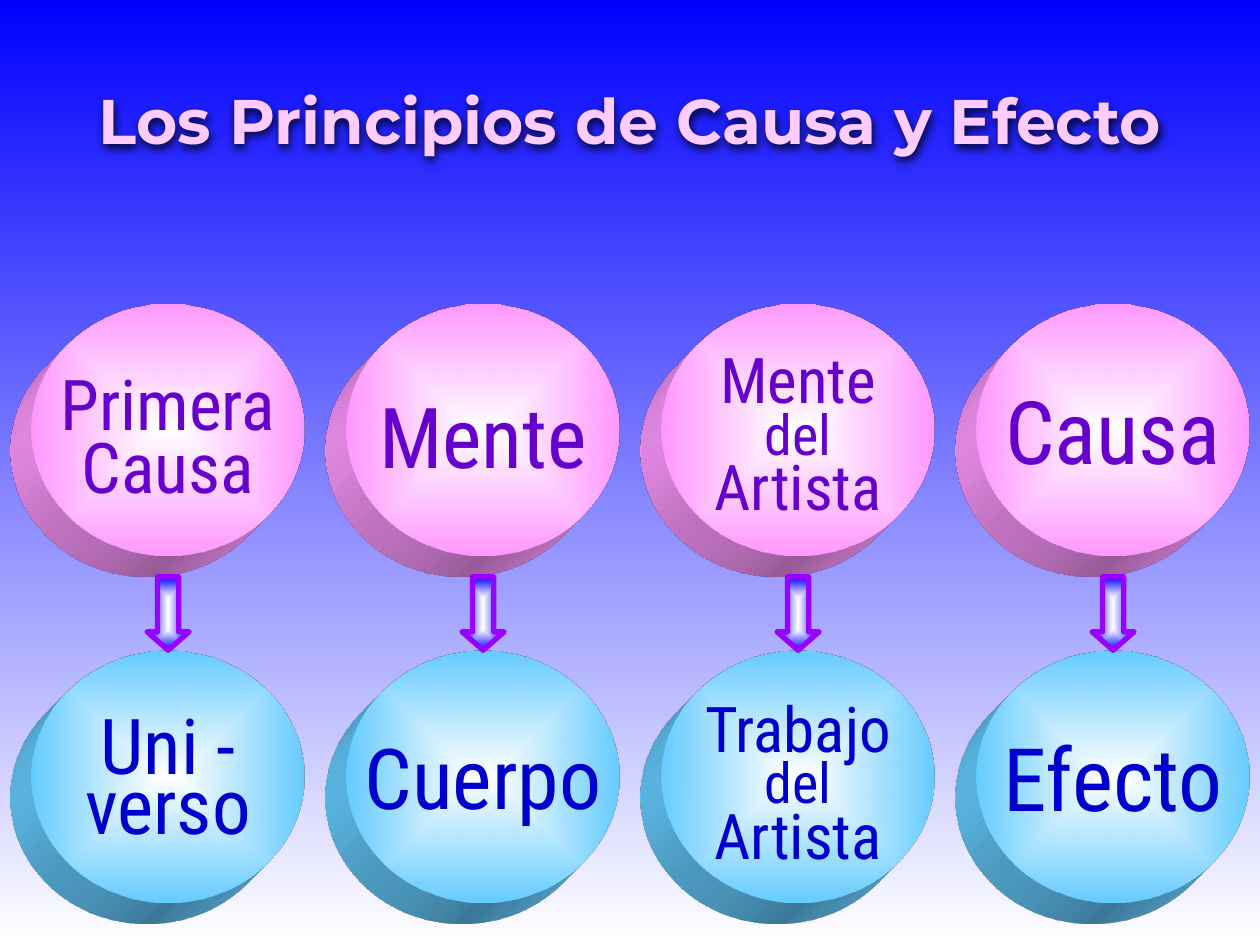
from dataclasses import dataclass

import lxml.etree
import pptx
import pptx.dml.color
import pptx.enum.shapes
import pptx.enum.text
import pptx.oxml
import pptx.oxml.ns
import pptx.util

Cm, Pt = pptx.util.Cm, pptx.util.Pt
SHAPE = pptx.enum.shapes.MSO_SHAPE
ANCHOR = pptx.enum.text.MSO_ANCHOR
CENTER = pptx.enum.text.PP_ALIGN.CENTER
qn = pptx.oxml.ns.qn
NS = pptx.oxml.ns.nsdecls("a")


@dataclass(frozen=True)
class Theme:
    title_font: str = "Montserrat"
    body_font: str = "Roboto Condensed"
    title_size: int = 36
    white: str = "FFFFFF"
    blue: str = "0000FF"
    title: str = "FFCCFF"
    title_edge: str = "000099"
    cause_fill: str = "FF99FF"
    cause_text: str = "6600CC"
    effect_fill: str = "66CCFF"
    effect_text: str = "0000CC"
    arrow_line: str = "9900FF"


@dataclass(frozen=True)
class Label:
    lines: tuple[tuple[str, int], ...]
    spacing: float = 1.0
    drop: float = 0  # extra top margin in points


@dataclass(frozen=True)
class Pair:
    cause: Label
    effect: Label


THEME = Theme()
PAIRS = (
    Pair(Label((("Primera", 40), ("Causa", 40)), 0.75, 16),
         Label((("Uni -", 44), ("verso", 44)), 0.65, 12)),
    Pair(Label((("Mente", 48),), 1.1), Label((("Cuerpo", 48),))),
    Pair(Label((("Mente", 36), ("del", 32), ("Artista", 36)), 0.75, 12),
         Label((("Trabajo", 36), ("del", 32), ("Artista", 36)), 0.75, 14)),
    Pair(Label((("Causa", 50),)), Label((("Efecto", 50),))),
)

# Column grid, in centimetres
LEFT, STEP = 0.64, 6.35
DISC_W, DISC_H = 5.5, 5.08
CAUSE_TOP, ARROW_TOP, EFFECT_TOP = 6.12, 11.63, 13.11
ARROW_W, ARROW_H = 0.85, 1.48


def set_gradient(fill, start: str, end: str, path_kind: str = "") -> None:
    """Top-down gradient, or one from the centre when path_kind is given."""
    fill.gradient()
    fill.gradient_angle = 270
    for stop, color, position in zip(fill.gradient_stops, (start, end), (0, 1)):
        stop.color.rgb = pptx.dml.color.RGBColor.from_string(color)
        stop.position = position
    if path_kind:
        grad = fill._fill._gradFill
        grad.replace(grad.find(qn("a:lin")), pptx.oxml.parse_xml(
            f'<a:path {NS} path="{path_kind}"><a:fillToRect l="50000" t="50000" '
            'r="50000" b="50000"/></a:path>'))


def add_run(p, text: str, font: str, size: int):
    r = p.add_run()
    r.text = text
    r.font.name, r.font.size = font, Pt(size)
    return r


def add_title(s, text: str) -> None:
    sp = s.shapes.add_textbox(Cm(1.06), Cm(1.52), Cm(23.29), Cm(3.76))
    tf = sp.text_frame
    tf.word_wrap = False
    p = tf.paragraphs[0]
    p.alignment = CENTER
    r = add_run(p, text, THEME.title_font, THEME.title_size)
    r.font.bold = True
    set_gradient(r.font.fill, THEME.title, THEME.white)
    r.font._element.insert(0, pptx.oxml.parse_xml(
        f'<a:ln {NS} w="{Pt(3)}"><a:solidFill><a:srgbClr val="{THEME.title_edge}"/>'
        '</a:solidFill></a:ln>'))
    # Soft dark halo
    sp._element.spPr.append(pptx.oxml.parse_xml(
        f'<a:effectLst {NS}><a:outerShdw blurRad="{Pt(5)}" dist="{Pt(1.5)}" dir="5400000" '
        'algn="ctr" rotWithShape="0"><a:srgbClr val="000000"><a:alpha val="80000"/>'
        '</a:srgbClr></a:outerShdw></a:effectLst>'))


def extrude(sp, color: str) -> None:
    for xml in (
        f'<a:scene3d {NS}><a:camera prst="legacyObliqueBottomLeft"/>'
        '<a:lightRig rig="legacyFlat3" dir="t"/></a:scene3d>',
        f'<a:sp3d {NS} extrusionH="430200" prstMaterial="legacyMatte">'
        '<a:bevelT w="13500" h="13500" prst="angle"/>'
        '<a:bevelB w="13500" h="13500" prst="angle"/>'
        f'<a:extrusionClr><a:srgbClr val="{color}"/></a:extrusionClr></a:sp3d>',
    ):
        sp._element.spPr.append(pptx.oxml.parse_xml(xml))


def add_disc(s, left: float, top: float, label: Label, fill: str, color: str) -> None:
    sp = s.shapes.add_shape(SHAPE.OVAL, Cm(left), Cm(top), Cm(DISC_W), Cm(DISC_H))
    set_gradient(sp.fill, THEME.white, fill, "shape")
    sp.line.fill.background()
    sp.shadow.inherit = False
    extrude(sp, fill)
    tf = sp.text_frame
    tf.word_wrap = False
    tf.vertical_anchor = ANCHOR.MIDDLE
    tf.margin_top = Pt(3.6 + label.drop)
    for i, (text, size) in enumerate(label.lines):
        p = tf.add_paragraph() if i else tf.paragraphs[0]
        p.alignment = CENTER
        p.line_spacing = label.spacing
        r = add_run(p, text, THEME.body_font, size)
        r.font.color.rgb = pptx.dml.color.RGBColor.from_string(color)


def add_arrow(s, center: float) -> None:
    sp = s.shapes.add_shape(SHAPE.DOWN_ARROW, Cm(center - ARROW_W / 2), Cm(ARROW_TOP),
                            Cm(ARROW_W), Cm(ARROW_H))
    sp.adjustments[0], sp.adjustments[1] = 0.5, 0.44
    set_gradient(sp.fill, THEME.white, THEME.blue, "rect")
    sp.line.color.rgb = pptx.dml.color.RGBColor.from_string(THEME.arrow_line)
    sp.line.width = Pt(3)
    sp.shadow.inherit = False


def main() -> None:
    prs = pptx.Presentation()
    prs.slide_width, prs.slide_height = Cm(25.4), Cm(19.05)
    s = prs.slides.add_slide(prs.slide_layouts[6])
    set_gradient(s.background.fill, THEME.blue, THEME.white)
    add_title(s, "Los Principios de Causa y Efecto")

    # One column per cause and effect
    for i, pair in enumerate(PAIRS):
        left = LEFT + i * STEP
        add_disc(s, left, CAUSE_TOP, pair.cause, THEME.cause_fill, THEME.cause_text)
        add_disc(s, left, EFFECT_TOP, pair.effect, THEME.effect_fill, THEME.effect_text)
        add_arrow(s, left + DISC_W / 2)

    prs.save("out.pptx")


if __name__ == "__main__":
    main()
